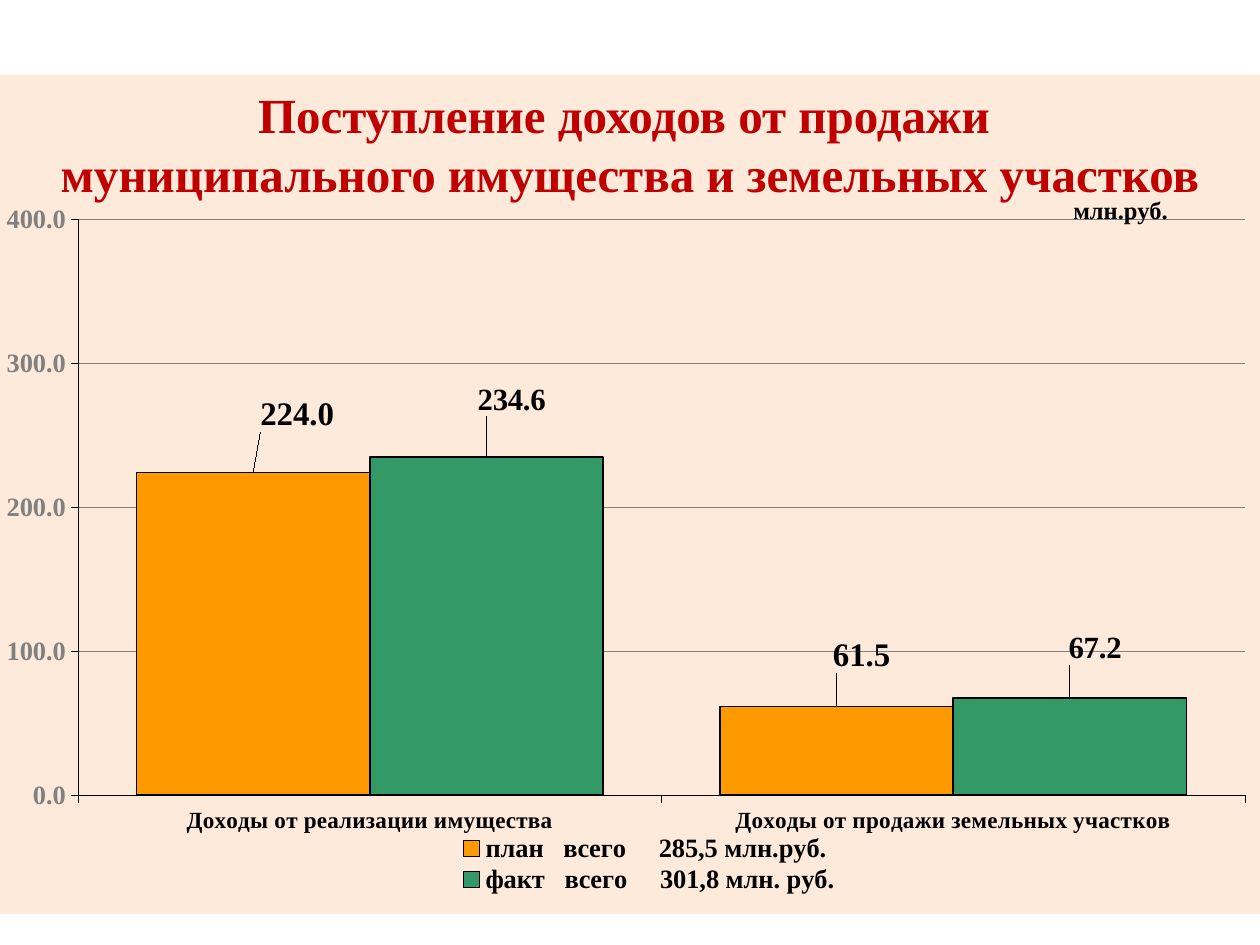
from dataclasses import dataclass

from lxml import etree
from pptx import Presentation
from pptx.chart.data import CategoryChartData
from pptx.dml.color import RGBColor
from pptx.enum.chart import (XL_CHART_TYPE, XL_LABEL_POSITION, XL_LEGEND_POSITION,
                             XL_TICK_LABEL_POSITION, XL_TICK_MARK)
from pptx.enum.text import MSO_ANCHOR, MSO_AUTO_SIZE, PP_ALIGN
from pptx.oxml.ns import qn
from pptx.util import Inches, Pt

COLUMNS = XL_CHART_TYPE.COLUMN_CLUSTERED
OUTSIDE_END = XL_LABEL_POSITION.OUTSIDE_END
LEGEND_RIGHT = XL_LEGEND_POSITION.RIGHT
LABELS_LOW = XL_TICK_LABEL_POSITION.LOW
TICK_OUT, TICK_NONE = XL_TICK_MARK.OUTSIDE, XL_TICK_MARK.NONE
MIDDLE, CENTER = MSO_ANCHOR.MIDDLE, PP_ALIGN.CENTER
NO_AUTOFIT = MSO_AUTO_SIZE.NONE
TITLE_ONLY = 5


@dataclass(frozen=True)
class Theme:
    font: str = "Times New Roman"
    panel: str = "FDEADA"
    title: str = "C00000"
    text: str = "000000"
    muted: str = "808080"
    plan: str = "FF9900"
    fact: str = "339966"
    title_size: float = 28
    unit_size: float = 14
    category_size: float = 13.2
    scale_size: float = 15.1
    plan_size: float = 18.8
    fact_size: float = 17.6


THEME = Theme()
CATEGORIES = ["Доходы от реализации имущества", "Доходы от продажи земельных участков"]
# name, values, colour, label size, label shifts as shares of the chart
SERIES = [
    ("план   всего     285,5 млн.руб. ", (224, 61.5), THEME.plan, THEME.plan_size,
     ((0.035, -0.05), (0.02, -0.04))),
    ("факт   всего     301,8 млн. руб.", (234.6, 67.2), THEME.fact, THEME.fact_size,
     ((0.02, -0.05), (0.02, -0.04))),
]


def set_all(target, values):
    for name, value in values.items():
        setattr(target, name, value)


def place(parent, index, **parts):
    """Give a chart part a manual layout as its child number index."""
    for old in parent.findall(qn("c:layout")):
        parent.remove(old)
    layout = etree.Element(qn("c:layout"))
    manual = etree.SubElement(layout, qn("c:manualLayout"))
    for tag, value in parts.items():
        etree.SubElement(manual, qn(f"c:{tag}")).set("val", str(value))
    parent.insert(index, layout)


class SlideBuilder:
    def __init__(self, prs, theme):
        self.theme = theme
        self.width, self.height = prs.slide_width, prs.slide_height
        self.s = prs.slides.add_slide(prs.slide_layouts[TITLE_ONLY])

    def box(self, x, y, w, h):
        """Turn shares of the slide into left, top, width and height."""
        return (round(x * self.width), round(y * self.height),
                round(w * self.width), round(h * self.height))

    def style_font(self, font, size, color):
        set_all(font, {"name": self.theme.font, "size": Pt(size), "bold": True})
        font.color.rgb = RGBColor.from_string(color)

    def style_line(self, line, color, width):
        line.color.rgb = RGBColor.from_string(color)
        line.width = Pt(width)

    def style_fill(self, fill, color):
        fill.solid()
        fill.fore_color.rgb = RGBColor.from_string(color)

    def title(self, text, *share):
        sp = self.s.shapes.title
        set_all(sp, dict(zip(("left", "top", "width", "height"), self.box(*share))))
        self.style_fill(sp.fill, self.theme.panel)
        self.style_line(sp.line, self.theme.panel, 0.75)
        tf = sp.text_frame
        set_all(tf, {"word_wrap": True, "auto_size": NO_AUTOFIT, "vertical_anchor": MIDDLE})
        p = tf.paragraphs[0]
        p.text, p.alignment = text, CENTER
        for r in p.runs:
            self.style_font(r.font, self.theme.title_size, self.theme.title)

    def text(self, text, *share):
        tf = self.s.shapes.add_textbox(*self.box(*share)).text_frame
        tf.word_wrap = True
        r = tf.paragraphs[0].add_run()
        r.text = text
        self.style_font(r.font, self.theme.unit_size, self.theme.text)

    def column_chart(self, categories, series, *share):
        t = self.theme
        data = CategoryChartData(number_format="0.0")
        data.categories = categories
        for name, values, *_ in series:
            data.add_series(name, values)
        chart = self.s.shapes.add_chart(COLUMNS, *self.box(*share), data).chart
        chart.has_title = False
        self.style_font(chart.font, t.fact_size, t.text)
        self.chart_background(chart)
        set_all(chart.plots[0], {"gap_width": 50, "overlap": 0, "vary_by_categories": False})
        plot_area = chart.plots[0]._element.getparent()
        place(plot_area, 0, layoutTarget="inner", xMode="edge", yMode="edge",
              x=0.062, y=0.021, w=0.926, h=0.812)
        self.axes(chart)
        self.legend(chart)
        for ser, (_, _, color, size, shifts) in zip(chart.plots[0].series, series):
            self.style_fill(ser.format.fill, color)
            self.style_line(ser.format.line, t.text, 0.98)
            self.value_labels(ser, size, shifts)

    def chart_background(self, chart):
        sp_pr = etree.Element(qn("c:spPr"))
        fill = etree.SubElement(sp_pr, qn("a:solidFill"))
        etree.SubElement(fill, qn("a:srgbClr")).set("val", self.theme.panel)
        line = etree.SubElement(sp_pr, qn("a:ln"))
        etree.SubElement(line, qn("a:noFill"))
        chart._chartSpace.find(qn("c:chart")).addnext(sp_pr)

    def axes(self, chart):
        t = self.theme
        cat, val = chart.category_axis, chart.value_axis
        for axis, size, color in ((cat, t.category_size, t.text), (val, t.scale_size, t.muted)):
            set_all(axis, {"major_tick_mark": TICK_OUT, "minor_tick_mark": TICK_NONE})
            self.style_font(axis.tick_labels.font, size, color)
            self.style_line(axis.format.line, t.text, 0.25)
        cat.tick_label_position = LABELS_LOW
        set_all(val, {"minimum_scale": 0, "maximum_scale": 400, "major_unit": 100,
                      "has_major_gridlines": True})
        set_all(val.tick_labels, {"number_format": "0.0", "number_format_is_linked": False})
        self.style_line(val.major_gridlines.format.line, t.muted, 0.25)

    def legend(self, chart):
        chart.has_legend = True
        set_all(chart.legend, {"position": LEGEND_RIGHT, "include_in_layout": False})
        self.style_font(chart.legend.font, self.theme.scale_size, self.theme.text)
        place(chart.legend._element, 1, xMode="edge", yMode="edge",
              x=0.36, y=0.885, w=0.31, h=0.09)

    def value_labels(self, ser, size, shifts):
        labels = ser.data_labels
        set_all(labels, {"show_value": True, "position": OUTSIDE_END,
                         "number_format": "0.0", "number_format_is_linked": False})
        self.style_font(labels.font, size, self.theme.text)
        for i, (dx, dy) in enumerate(shifts):
            label = ser.points[i].data_label
            label.position = OUTSIDE_END
            self.style_font(label.font, size, self.theme.text)
            place(labels._element.findall(qn("c:dLbl"))[i], 1, x=dx, y=dy)


def main():
    prs = Presentation()
    prs.slide_width, prs.slide_height = Inches(10), Inches(7.5)
    slide = SlideBuilder(prs, THEME)
    slide.title("Поступление доходов от продажи \vмуниципального имущества и земельных участков",
                0, 0.08, 1, 0.143)
    slide.column_chart(CATEGORIES, SERIES, 0, 0.216, 1, 0.751)
    slide.text("млн.руб.", 0.842, 0.2, 0.1, 0.045)
    prs.save("out.pptx")


if __name__ == "__main__":
    main()
